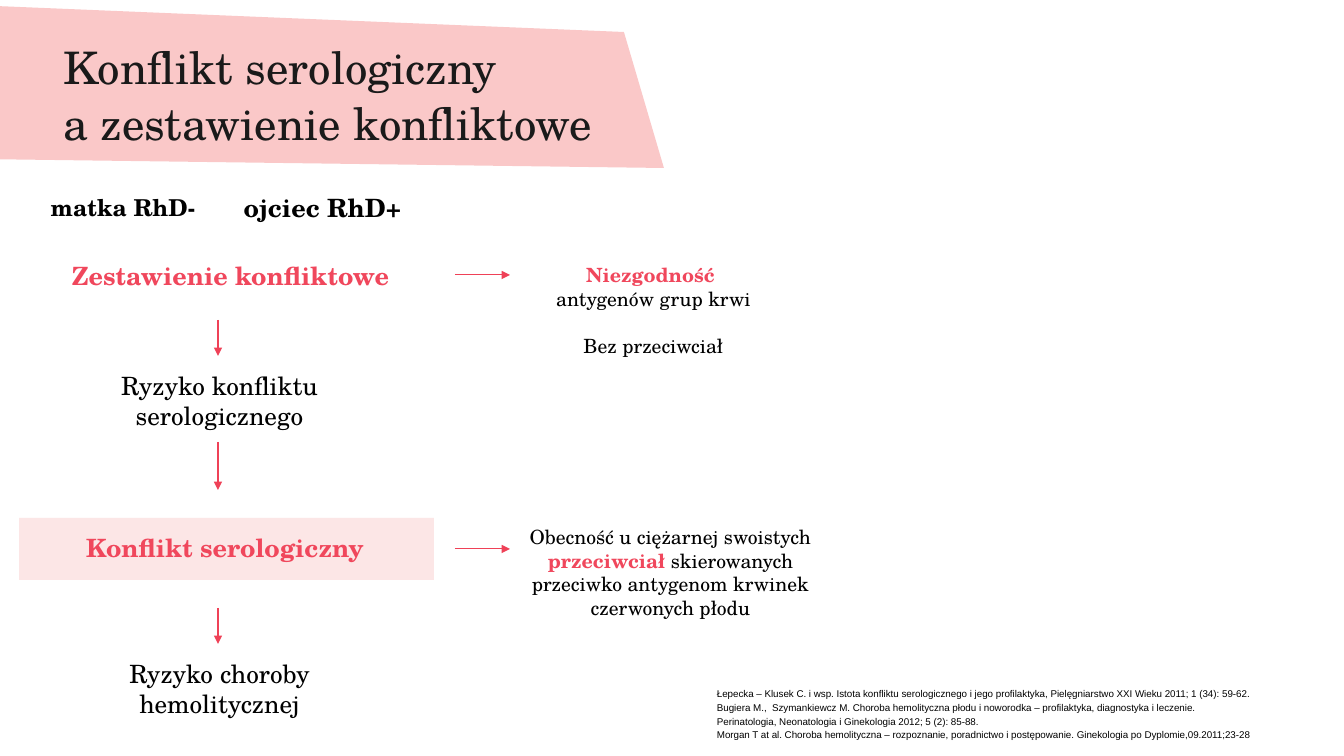
from pptx import Presentation
from pptx import util as u
from pptx.dml.color import RGBColor
from pptx.enum import shapes, text
from pptx.oxml.ns import qn
from lxml import etree

EMU_PER_PX = 914400 / 100.8
BLACK = RGBColor(0x00, 0x00, 0x00)
TITLE_INK = RGBColor(0x1A, 0x1A, 0x1A)
ACCENT = RGBColor(0xF0, 0x47, 0x5C)
ARROW = RGBColor(0xEF, 0x41, 0x57)
PINK = RGBColor(0xFA, 0xC8, 0xC8)
SERIF = "TeX Gyre Schola"
SANS = "Arial"
CENTER = text.PP_ALIGN.CENTER
LEFT = text.PP_ALIGN.LEFT


def px(length):
    return u.Emu(round(length * EMU_PER_PX))


class Board:
    def __init__(self, slide):
        self.slide = slide
        self.shapes = slide.shapes

    def style(self, run, size, color=BLACK, bold=False, font=SERIF):
        run.font.name = font
        run.font.size = u.Pt(size)
        run.font.bold = bold
        run.font.color.rgb = color

    def banner(self, start, *corners):
        builder = self.shapes.build_freeform(px(start[0]), px(start[1]), scale=1.0)
        builder.add_line_segments([(px(x), px(y)) for x, y in corners], close=True)
        outline = builder.convert_to_shape()
        self.paint(outline, PINK)

    def paint(self, shape, color):
        shape.shadow.inherit = False
        shape.fill.solid()
        shape.fill.fore_color.rgb = color
        shape.line.fill.background()

    def panel(self, left, top, width, height, color, opacity):
        panel = self.shapes.add_shape(
            shapes.MSO_SHAPE.RECTANGLE, px(left), px(top), px(width), px(height))
        self.paint(panel, color)
        tint = panel.element.spPr.find(qn("a:solidFill")).find(qn("a:srgbClr"))
        etree.SubElement(tint, qn("a:alpha"), val=str(opacity * 1000))

    def title(self, wording, left, top, width, height):
        heading = self.shapes.title
        heading.left, heading.top = px(left), px(top)
        heading.width, heading.height = px(width), px(height)
        heading.element.getparent().append(heading.element)
        frame = heading.text_frame
        frame.text = wording
        frame.auto_size = text.MSO_AUTO_SIZE.NONE
        frame.vertical_anchor = text.MSO_ANCHOR.TOP
        line = frame.paragraphs[0]
        line.alignment = LEFT
        line.line_spacing = u.Pt(40)
        for run in line.runs:
            self.style(run, 32, TITLE_INK)

    def label(self, wording, left, top, width, height, size, color=BLACK,
              bold=False, font=SERIF, align=CENTER, gap=0):
        box = self.shapes.add_textbox(px(left), px(top), px(width), px(height))
        frame = box.text_frame
        frame.word_wrap = True
        frame.text = wording
        for index, line in enumerate(frame.paragraphs):
            line.alignment = align
            if index:
                line.space_before = u.Pt(gap)
            for run in line.runs:
                self.style(run, size, color, bold, font)
        return frame.paragraphs[0]

    def arrow(self, x1, y1, x2, y2):
        line = self.shapes.add_connector(
            shapes.MSO_CONNECTOR.STRAIGHT, px(x1), px(y1), px(x2), px(y2))
        line.line.color.rgb = ARROW
        line.line.width = u.Pt(0.75)
        properties = line.element.spPr
        etree.SubElement(properties.find(qn("a:ln")), qn("a:tailEnd"), type="triangle")
        etree.SubElement(properties, qn("a:effectLst"))


def main():
    deck = Presentation()
    deck.slide_width, deck.slide_height = px(1344), px(756)
    board = Board(deck.slides.add_slide(deck.slide_layouts[5]))

    board.banner((-149, 0), (624, 32), (664, 168), (-99, 158))
    board.title("Konflikt serologiczny \va zestawienie konfliktowe", 53, 32, 777, 142)

    board.label("matka RhD-", 38, 188, 170, 46, 16.6, bold=True)
    board.label("ojciec RhD+", 229, 187, 187, 46, 18, bold=True)
    board.label("Zestawienie konfliktowe", 24, 255, 413, 49, 18, ACCENT, True)
    board.panel(19, 518, 415, 62, PINK, 44)
    board.label("Konflikt serologiczny", 9, 527, 432, 53, 18, ACCENT, True)
    for risk, top in (("Ryzyko konfliktu serologicznego", 365),
                      ("Ryzyko choroby hemolitycznej", 653)):
        board.label(risk, 51, top, 337, 74, 18)

    for start, end in ((320, 356), (442, 490), (608, 644)):
        board.arrow(218, start, 218, end)
    for level in (275, 549):
        board.arrow(455, level, 510, level)

    mismatch = board.label("Niezgodność \vantygenów grup krwi\nBez przeciwciał",
                           485, 258, 337, 123, 14, gap=16.8)
    board.style(mismatch.runs[0], 14, ACCENT, True)

    antibodies = board.label("Obecność u ciężarnej swoistych ", 518, 520, 305, 123, 14)
    for wording, color, bold in (
            ("przeciwciał ", ACCENT, True),
            ("skierowanych przeciwko antygenom krwinek czerwonych płodu", BLACK, False)):
        run = antibodies.add_run()
        run.text = wording
        board.style(run, 14, color, bold)

    references = (
        "Łepecka – Klusek C. i wsp. Istota konfliktu serologicznego i jego profilaktyka, "
        "Pielęgniarstwo XXI Wieku 2011; 1 (34): 59-62.",
        "Bugiera M.,  Szymankiewcz M. Choroba hemolityczna płodu i noworodka – "
        "profilaktyka, diagnostyka i leczenie.",
        "Perinatologia, Neonatologia i Ginekologia 2012; 5 (2): 85-88.",
        "Morgan T at al. Choroba hemolityczna – rozpoznanie, poradnictwo i postępowanie. "
        "Ginekologia po Dyplomie,09.2011;23-28",
    )
    board.label("\n".join(references), 707, 683, 637, 73, 7, font=SANS, align=LEFT, gap=1.4)

    deck.save("out.pptx")


if __name__ == "__main__":
    main()
